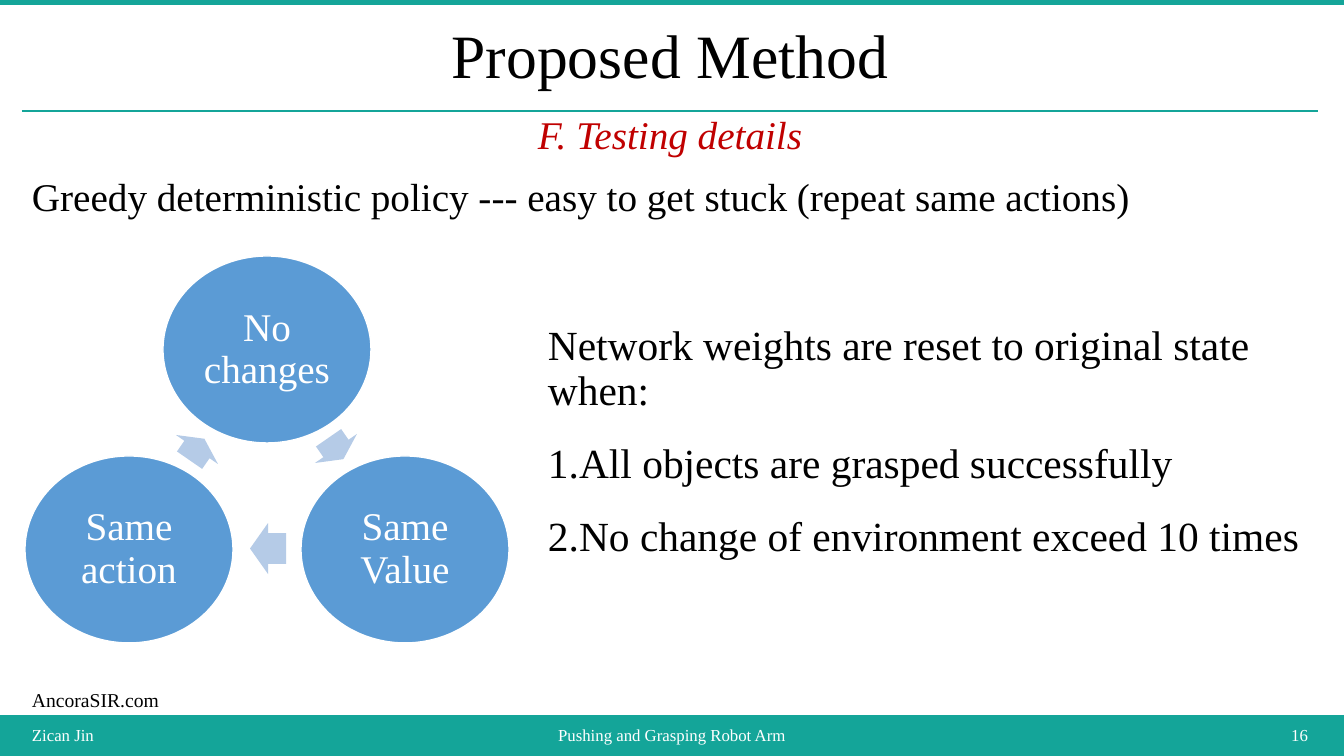
from dataclasses import dataclass

from lxml import etree
from pptx import Presentation
from pptx.dml.color import RGBColor
from pptx.enum.shapes import MSO_CONNECTOR, MSO_SHAPE
from pptx.enum.text import MSO_ANCHOR, MSO_AUTO_SIZE, PP_ALIGN
from pptx.oxml.ns import qn
from pptx.util import Pt

LEFT, CENTER, RIGHT = PP_ALIGN.LEFT, PP_ALIGN.CENTER, PP_ALIGN.RIGHT
TOP, MIDDLE = MSO_ANCHOR.TOP, MSO_ANCHOR.MIDDLE
NO_AUTOFIT = MSO_AUTO_SIZE.NONE
RECTANGLE, OVAL, ARROW = MSO_SHAPE.RECTANGLE, MSO_SHAPE.OVAL, MSO_SHAPE.RIGHT_ARROW
STRAIGHT = MSO_CONNECTOR.STRAIGHT

PX_PER_INCH = 100.8
EMU_PER_PX = 914400 / PX_PER_INCH
SLIDE_WIDTH, SLIDE_HEIGHT = 1344, 756
MARGIN = 22
CONTENT_WIDTH = 1296


@dataclass(frozen=True)
class Theme:
    font: str = "Times New Roman"
    teal: str = "14A599"
    white: str = "FFFFFF"
    black: str = "000000"
    red: str = "C00000"
    blue: str = "5B9BD5"
    pale_blue: str = "B5CBE7"
    title_size: float = 44
    body_size: float = 28
    conditions_size: float = 29.6
    website_size: float = 14
    footer_size: float = 12


THEME = Theme()


def px(length):
    return round(length * EMU_PER_PX)


def color(value):
    return RGBColor.from_string(value)


def apply_format(target, values):
    for name, value in values.items():
        setattr(target, name, value)


def write_text(shape, lines, size, text_color, align=LEFT, anchor=TOP,
               italic=False, spacing=1.0, gap=0, insets=(10, 5), wrap=True):
    frame = shape.text_frame
    side, end = map(px, insets)
    apply_format(frame, {
        "word_wrap": wrap, "auto_size": NO_AUTOFIT, "vertical_anchor": anchor,
        "margin_left": side, "margin_right": side,
        "margin_top": end, "margin_bottom": end,
    })
    for index, line in enumerate(lines):
        paragraph = frame.add_paragraph() if index else frame.paragraphs[0]
        run = paragraph.add_run()
        run.text = line
        apply_format(paragraph, {
            "alignment": align, "line_spacing": spacing,
            "space_before": Pt(gap if index else 0), "space_after": Pt(0),
        })
        apply_format(run.font, {"name": THEME.font, "size": Pt(size), "italic": italic})
        run.font.color.rgb = color(text_color)


def add_text(slide, box, lines, size, text_color, **options):
    shape = slide.shapes.add_textbox(*map(px, box))
    write_text(shape, lines, size, text_color, **options)


def add_title(slide, box, text):
    title = slide.shapes.title
    apply_format(title, dict(zip(("left", "top", "width", "height"), map(px, box))))
    write_text(title, [text], THEME.title_size, THEME.black,
               align=CENTER, anchor=MIDDLE, spacing=0.9)


def add_filled_shape(slide, kind, box, fill, outline=None):
    shape = slide.shapes.add_shape(kind, *map(px, box))
    shape.shadow.inherit = False
    shape.fill.solid()
    shape.fill.fore_color.rgb = color(fill)
    if outline:
        shape.line.color.rgb = color(outline)
        shape.line.width = Pt(1)
    else:
        shape.line.fill.background()
    return shape


def add_rule(slide, y):
    rule = slide.shapes.add_connector(
        STRAIGHT, px(MARGIN), px(y), px(MARGIN + CONTENT_WIDTH), px(y))
    rule.line.color.rgb = color(THEME.teal)
    rule.line.width = Pt(1)
    etree.SubElement(rule._element.spPr, qn("a:effectLst"))


def add_cycle_step(slide, left, top, text):
    step = add_filled_shape(slide, OVAL, (left, top, 208, 187), THEME.blue, THEME.white)
    write_text(step, [text], THEME.body_size, THEME.white,
               align=CENTER, anchor=MIDDLE, spacing=0.9, insets=(4, 4))


def add_cycle_arrow(slide, left, top, width, rotation):
    arrow = add_filled_shape(slide, ARROW, (left, top, width, 51), THEME.pale_blue)
    arrow.adjustments[0] = 0.6
    arrow.adjustments[1] = 0.5
    arrow.rotation = rotation


def add_cycle(slide):
    left, top, step_x, step_y = 163, 256, 138, 200
    steps = [("No changes", 0, 0), ("Same Value", 1, 1), ("Same action", -1, 1)]
    arrows = [(323, 423, 26, 55.3), (250, 523, 36, 180), (184, 424, 26, 304.7)]
    for (text, column, row), arrow in zip(steps, arrows):
        add_cycle_step(slide, left + column * step_x, top + row * step_y, text)
        add_cycle_arrow(slide, *arrow)


def add_footer(slide):
    parts = [
        ("Zican Jin", 22, 490, LEFT),
        ("Pushing and Grasping Robot Arm", 512, 320, CENTER),
        ("16", 832, 486, RIGHT),
    ]
    for text, left, width, align in parts:
        add_text(slide, (left, 715, width, 40), [text], THEME.footer_size,
                 THEME.white, align=align, anchor=MIDDLE)


def main():
    presentation = Presentation()
    presentation.slide_width = px(SLIDE_WIDTH)
    presentation.slide_height = px(SLIDE_HEIGHT)
    slide = presentation.slides.add_slide(presentation.slide_layouts[5])

    # Teal background with a white content panel
    slide.background.fill.solid()
    slide.background.fill.fore_color.rgb = color(THEME.teal)
    panel = add_filled_shape(slide, RECTANGLE, (0, 5, SLIDE_WIDTH, 710), THEME.white)
    slide.shapes._spTree.insert(2, panel._element)  # behind the title

    # Headings
    add_title(slide, (MARGIN, 8, CONTENT_WIDTH, 102), "Proposed Method")
    add_rule(slide, 111)
    add_text(slide, (MARGIN, 111, CONTENT_WIDTH, 56), ["F. Testing details"],
             THEME.body_size, THEME.red, align=CENTER, italic=True, spacing=0.9)
    add_text(slide, (MARGIN, 173, 1128, 56),
             ["Greedy deterministic policy --- easy to get stuck (repeat same actions)"],
             THEME.body_size, THEME.black, spacing=0.9)

    # Cycle of repeated actions and the reset conditions
    add_cycle(slide)
    add_text(slide, (538, 320, 784, 268), [
        "Network weights are reset to original state when:",
        "1.All objects are grasped successfully",
        "2.No change of environment exceed 10 times",
    ], THEME.conditions_size, THEME.black, spacing=0.9, gap=20)

    # Website and footer
    add_text(slide, (MARGIN, 683, 148, 34), ["AncoraSIR.com"],
             THEME.website_size, THEME.black, wrap=False)
    add_footer(slide)

    presentation.save("out.pptx")


if __name__ == "__main__":
    main()
